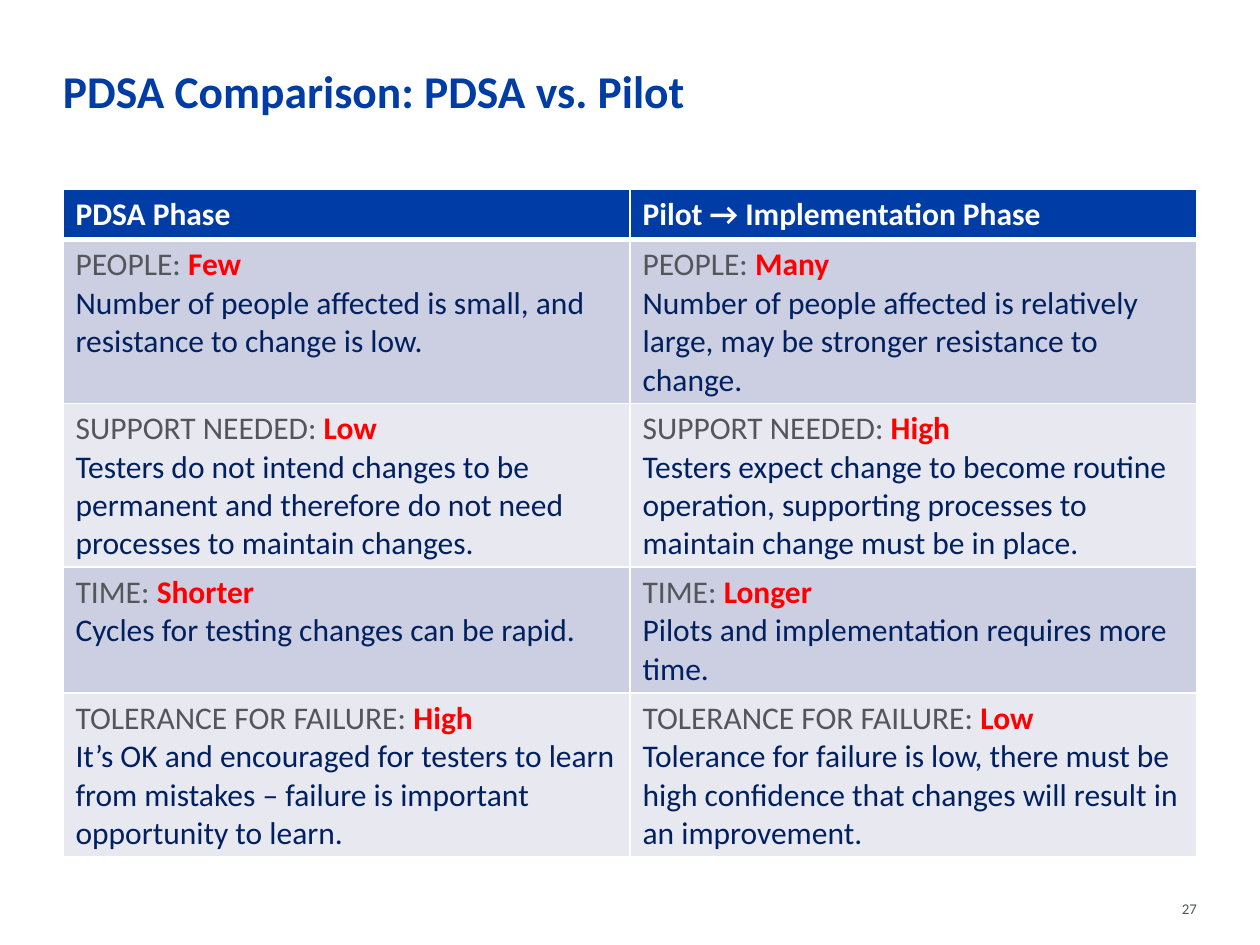
"""Build the slide comparing the PDSA phase with the pilot phase."""
from lxml.etree import SubElement
from pptx import Presentation
from pptx.dml.color import RGBColor
from pptx.enum.text import MSO_ANCHOR, PP_ALIGN
from pptx.oxml.ns import qn
from pptx.util import Inches, Pt

COLORS = {
    "blue": "003CA5",
    "navy": "002060",
    "red": "FF0000",
    "gray": "53565A",
    "white": "FFFFFF",
    "dark_band": "CCCEE1",
    "light_band": "E7E8F0",
}
HEADINGS = ["PDSA Phase", "Pilot → Implementation Phase"]
COMPARISONS = [
    ("PEOPLE: ", 1.3, [
        ("Few", "Number of people affected is small, and resistance to change is low."),
        ("Many", "Number of people affected is relatively large, may be stronger resistance to change."),
    ]),
    ("SUPPORT NEEDED: ", 1.3, [
        ("Low", "Testers do not intend changes to be permanent and therefore do not need processes to maintain changes."),
        ("High", "Testers expect change to become routine operation, supporting processes to maintain change must be in place."),
    ]),
    ("TIME: ", 1, [
        ("Shorter", "Cycles for testing changes can be rapid."),
        ("Longer", "Pilots and implementation requires more time."),
    ]),
    ("TOLERANCE FOR FAILURE: ", 1.3, [
        ("High", "It’s OK and encouraged for testers to learn from mistakes – failure is important opportunity to learn."),
        ("Low", "Tolerance for failure is low, there must be high confidence that changes will result in an improvement."),
    ]),
]


def add_run(paragraph, text, color, size=18, bold=False):
    run = paragraph.add_run()
    run.text = text
    run.font.name = "Calibri"
    run.font.size = Pt(size)
    run.font.bold = bold
    run.font.color.rgb = RGBColor.from_string(COLORS[color])


def style_cell(cell, fill, top=1, bottom=1):
    properties = cell._tc.get_or_add_tcPr()
    for side, width in (("L", 1), ("R", 1), ("T", top), ("B", bottom)):
        line = SubElement(properties, qn(f"a:ln{side}"), w=str(Pt(width)))
        SubElement(SubElement(line, qn("a:solidFill")), qn("a:srgbClr"), val=COLORS["white"])
    cell.fill.solid()
    cell.fill.fore_color.rgb = RGBColor.from_string(COLORS[fill])


presentation = Presentation()
presentation.slide_width = Inches(10)
presentation.slide_height = Inches(7.5)
slide = presentation.slides.add_slide(presentation.slide_layouts[6])

text_boxes = [
    ("PDSA Comparison: PDSA vs. Pilot", (0.5, 0.5, 9, 0.87), "blue", 26, True, PP_ALIGN.LEFT, MSO_ANCHOR.TOP),
    ("27", (8.69, 6.97, 0.81, 0.31), "gray", 8.5, False, PP_ALIGN.RIGHT, MSO_ANCHOR.BOTTOM),
]
for text, position, color, size, bold, alignment, anchor in text_boxes:
    frame = slide.shapes.add_textbox(*[Inches(length) for length in position]).text_frame
    frame.word_wrap = True
    frame.vertical_anchor = anchor
    frame.margin_left = frame.margin_right = frame.margin_top = frame.margin_bottom = 0
    frame.paragraphs[0].alignment = alignment
    add_run(frame.paragraphs[0], text, color, size, bold)

table = slide.shapes.add_table(
    len(COMPARISONS) + 1, len(HEADINGS), Inches(0.5), Inches(1.5), Inches(9), Inches(5.3)
).table
table.rows[0].height = Inches(0.4)
for column, heading in enumerate(HEADINGS):
    table.columns[column].width = Inches(4.5)
    cell = table.cell(0, column)
    style_cell(cell, "blue", bottom=3)
    add_run(cell.text_frame.paragraphs[0], heading, "white", bold=True)

for row, (topic, height, phases) in enumerate(COMPARISONS, start=1):
    table.rows[row].height = Inches(height)
    for column, (rating, explanation) in enumerate(phases):
        cell = table.cell(row, column)
        style_cell(cell, "dark_band" if row % 2 else "light_band", top=3 if row == 1 else 1)
        paragraph = cell.text_frame.paragraphs[0]
        add_run(paragraph, topic, "gray")
        add_run(paragraph, rating, "red", bold=True)
        add_run(cell.text_frame.add_paragraph(), explanation, "navy")

presentation.save("out.pptx")
